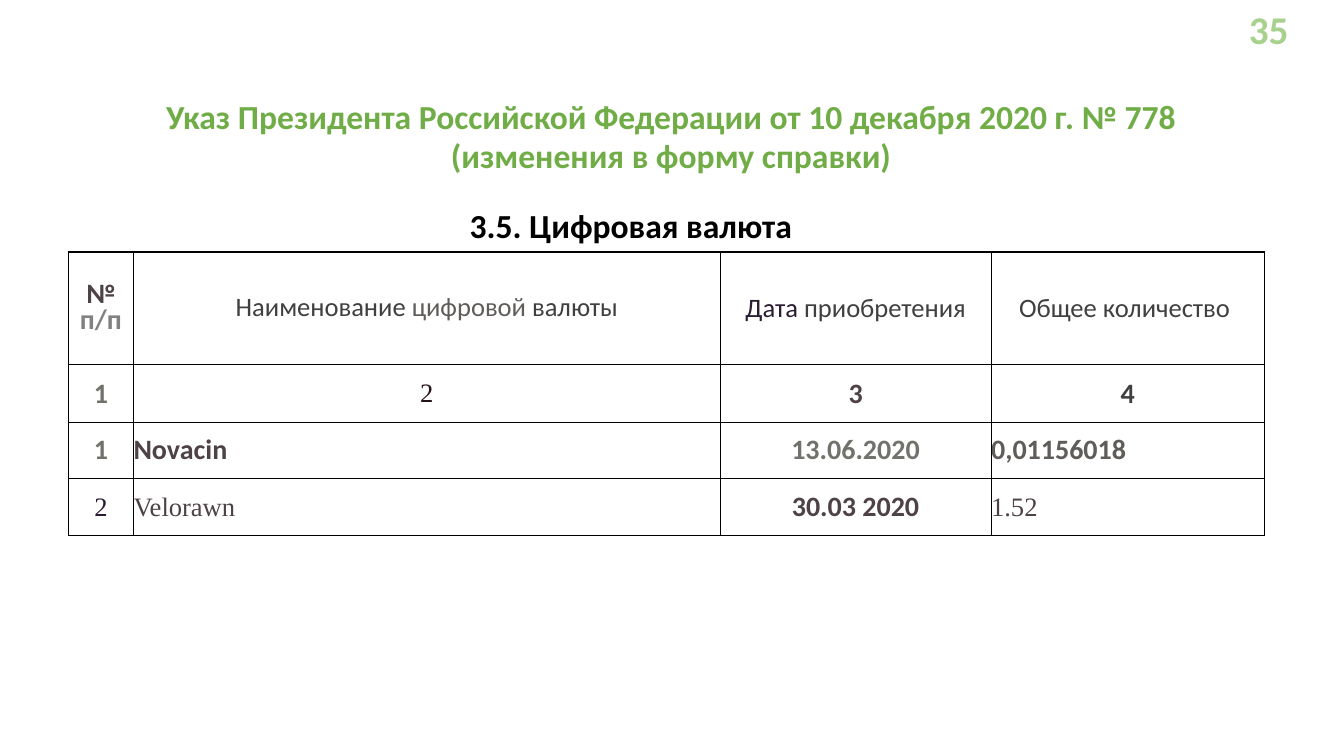
from lxml import etree
from pptx import Presentation
from pptx.dml.color import RGBColor
from pptx.enum.shapes import MSO_SHAPE
from pptx.enum.text import MSO_ANCHOR, MSO_AUTO_SIZE, PP_ALIGN
from pptx.oxml.ns import qn
from pptx.util import Pt

CENTER, LEFT = PP_ALIGN.CENTER, PP_ALIGN.LEFT
TOP, MIDDLE = MSO_ANCHOR.TOP, MSO_ANCHOR.MIDDLE
NO_FIT = MSO_AUTO_SIZE.NONE
RECT = MSO_SHAPE.RECTANGLE
TITLE_ONLY = 5

SANS, SERIF = "Calibri", "Times New Roman"
BOLD, PLAIN, ROMAN = (SANS, 20, True), (SANS, 19, False), (SERIF, 19, False)
BLACK, WHITE, GREEN, PALE_GREEN = "000000", "FFFFFF", "70AD47", "A9D18E"
DARK, BROWN, MID, GRAY, LIGHT = "404040", "4E4247", "5F5C5A", "72726D", "818181"
PLUM, WINE = "2B1C32", "271119"

COLUMNS = [46.6, 419, 193.6, 195.2]
ROWS = [80.6, 41, 40.3, 40.7]
HEADER = [
    (BOLD, CENTER, 0.77, [("№ ", BROWN), ("п/п", LIGHT)]),
    (PLAIN, CENTER, 0.82, [("Наименование ", DARK), ("цифровой ", MID), ("валюты", DARK)]),
    (PLAIN, CENTER, 1, [("Дата ", PLUM), ("приобретения", DARK)]),
    (PLAIN, LEFT, 1, [("Общее количество", DARK)]),
]
BODY = [
    [("1", BOLD, GRAY), ("2", ROMAN, WINE), ("3", BOLD, BROWN), ("4", BOLD, DARK)],
    [("1", BOLD, GRAY), ("Novacin", BOLD, BROWN), ("13.06.2020", BOLD, GRAY),
     ("0,01156018", BOLD, MID)],
    [("2", ROMAN, PLUM), ("Velorawn", ROMAN, BROWN), ("30.03 2020", BOLD, BROWN),
     ("1.52", ROMAN, BROWN)],
]
HEADER_INDENT = 20


def color(value):
    """Turn a hex string into a colour."""
    return RGBColor.from_string(value)


def add_run(p, text, style, hex_color):
    """Append one run in a (font, size, bold) style."""
    r = p.add_run()
    r.text = text
    r.font.name, size, r.font.bold = style
    r.font.size = Pt(size)
    r.font.color.rgb = color(hex_color)


def format_box(sp, text, size, hex_color, align, wrap, spacing=1):
    """Fill a shape with white and give it one bold paragraph."""
    sp.fill.solid()
    sp.fill.fore_color.rgb = color(WHITE)
    sp.line.fill.background()
    tf = sp.text_frame
    tf.word_wrap, tf.auto_size, tf.vertical_anchor = wrap, NO_FIT, TOP
    tf.margin_left = tf.margin_right = tf.margin_top = tf.margin_bottom = 0
    p = tf.paragraphs[0]
    p.alignment, p.line_spacing = align, spacing
    p.space_before = Pt(0)
    add_run(p, text, (SANS, size, True), hex_color)


def add_title(s, x, y, w, h):
    """Place the title in the given box."""
    sp = s.shapes.title
    sp.left, sp.top, sp.width, sp.height = Pt(x), Pt(y), Pt(w), Pt(h)
    format_box(sp, "Указ Президента Российской Федерации от 10 декабря 2020 г. № 778 "
               "(изменения в форму справки)", 24, GREEN, CENTER, True, 0.97)


def add_label(s, x, y, w, h, text, size, hex_color):
    """Place a one-line label in the given box."""
    sp = s.shapes.add_shape(RECT, Pt(x), Pt(y), Pt(w), Pt(h))
    sp.shadow.inherit = False
    format_box(sp, text, size, hex_color, LEFT, False)


def format_cell(cell, style, align, spacing, runs):
    """Write the runs of a cell and draw its four borders."""
    cell.margin_left = cell.margin_right = cell.margin_top = cell.margin_bottom = 0
    cell.vertical_anchor = MIDDLE
    cell.fill.background()
    tcPr = cell._tc.get_or_add_tcPr()
    for i, side in enumerate(("a:lnL", "a:lnR", "a:lnT", "a:lnB")):
        ln = etree.Element(qn(side), w=str(Pt(1)))
        fill = etree.SubElement(ln, qn("a:solidFill"))
        etree.SubElement(fill, qn("a:srgbClr"), val=BLACK)
        tcPr.insert(i, ln)
    p = cell.text_frame.paragraphs[0]
    p.alignment, p.line_spacing = align, spacing
    for text, hex_color in runs:
        add_run(p, text, style, hex_color)


def add_currency_table(s, x, y):
    """Build the digital currency table from its top left corner."""
    frame = s.shapes.add_table(len(ROWS), len(COLUMNS), Pt(x), Pt(y),
                               Pt(sum(COLUMNS)), Pt(sum(ROWS)))
    table = frame.table
    table.first_row = table.horz_banding = False
    for column, width in zip(table.columns, COLUMNS):
        column.width = Pt(width)
    for row, height in zip(table.rows, ROWS):
        row.height = Pt(height)
    for c, content in enumerate(HEADER):
        format_cell(table.cell(0, c), *content)
    pPr = table.cell(0, 3).text_frame.paragraphs[0]._p.get_or_add_pPr()
    pPr.set("indent", str(Pt(HEADER_INDENT)))
    for r, values in enumerate(BODY, 1):
        for c, (text, style, hex_color) in enumerate(values):
            align = LEFT if r > 1 and c in (1, 3) else CENTER
            format_cell(table.cell(r, c), style, align, 1, [(text, hex_color)])


def main():
    """Build the slide and save it."""
    prs = Presentation()
    prs.slide_width, prs.slide_height = Pt(960), Pt(540)
    s = prs.slides.add_slide(prs.slide_layouts[TITLE_ONLY])
    add_label(s, 892, 3.6, 29, 21, "35", 28, PALE_GREEN)
    add_title(s, 118, 70.3, 722.6, 52.5)
    add_label(s, 335.5, 146.4, 230, 22.5, "3.5. Цифровая валюта", 24, BLACK)
    add_currency_table(s, 48.8, 180)
    prs.save("out.pptx")


if __name__ == "__main__":
    main()
